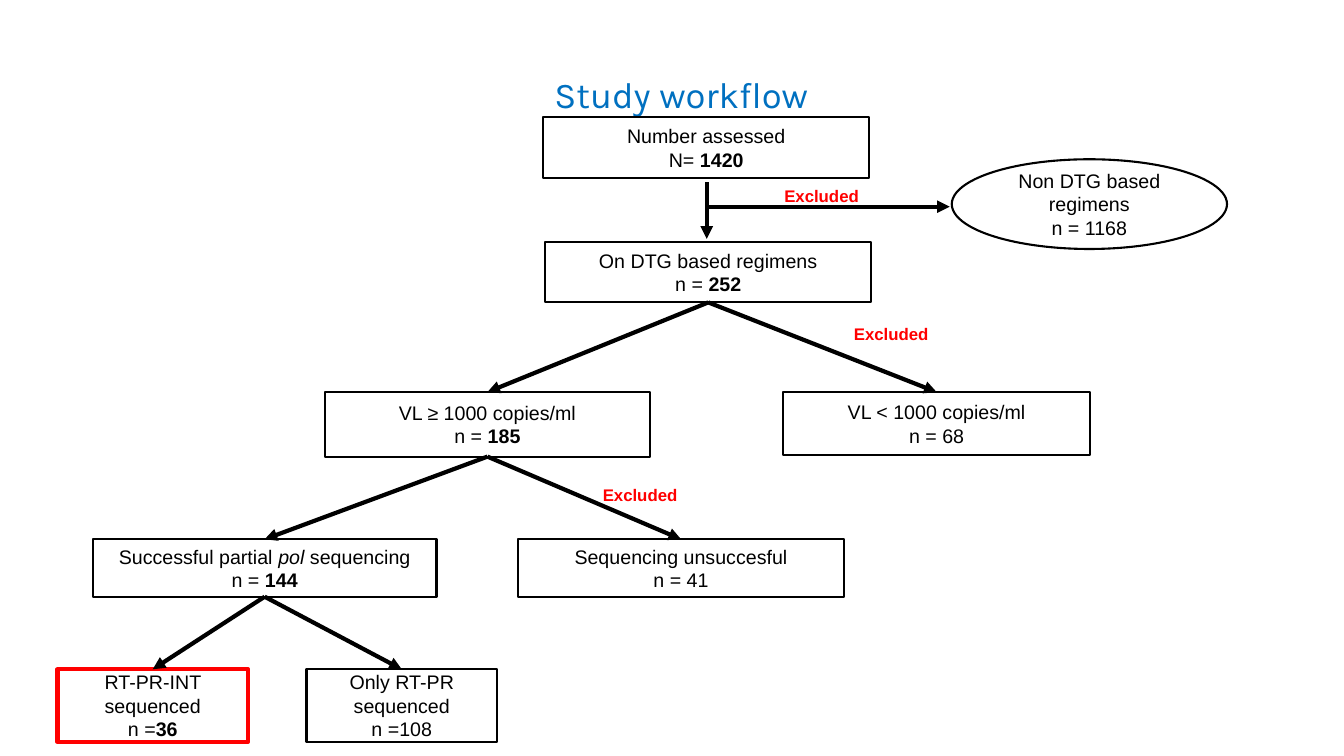
from dataclasses import dataclass

from lxml.etree import SubElement
from pptx import Presentation
from pptx.dml.color import RGBColor
from pptx.enum.shapes import MSO_CONNECTOR, MSO_SHAPE
from pptx.enum.text import MSO_ANCHOR, MSO_AUTO_SIZE, PP_ALIGN
from pptx.oxml.ns import qn
from pptx.shapes.autoshape import Shape
from pptx.shapes.connector import Connector
from pptx.slide import Slide
from pptx.text.text import Font
from pptx.util import Inches, Pt

CELL = Inches(0.1)  # one column or row of the grid
TOP, BOTTOM = 0, 2  # connection sites of a rectangle


@dataclass(frozen=True)
class Theme:
    ink: RGBColor = RGBColor(0, 0, 0)
    alert: RGBColor = RGBColor(255, 0, 0)
    title: RGBColor = RGBColor(0, 112, 192)
    body_font: str = "Arial"
    title_font: str = "Karla"
    title_size: int = 26
    body_size: int = 14
    label_size: int = 12
    thin: float = 1.5
    thick: float = 3


@dataclass(frozen=True)
class Step:
    """A node of the flow; *marks* set off numbers (bold) and words (italic)."""
    name: str
    mid: float
    top: float
    wide: float
    high: float
    text: str
    form: MSO_SHAPE = MSO_SHAPE.RECTANGLE
    final: bool = False


THEME = Theme()

STEPS = [
    Step("all", 70.05, 11.6, 32.3, 6.1, "Number assessed\nN= *1420*"),
    Step("other", 108.05, 15.8, 27.3, 8.9, "Non DTG based regimens\nn = 1168", MSO_SHAPE.OVAL),
    Step("dtg", 70.25, 24, 32.3, 6, "On DTG based regimens\nn = *252*"),
    Step("high", 48.35, 38.9, 32.3, 6.4, "VL ≥ 1000 copies/ml\nn = *185*"),
    Step("low", 92.9, 38.9, 30.4, 6.2, "VL < 1000 copies/ml\nn = 68"),
    Step("done", 26.25, 53.5, 34.1, 5.7, "Successful partial *pol* sequencing\nn = *144*"),
    Step("failed", 67.55, 53.5, 32.3, 5.7, "Sequencing unsuccesful\nn = 41"),
    Step("full", 15.15, 66.4, 18.9, 7.2, "RT-PR-INT sequenced\nn =*36*", final=True),
    Step("part", 39.85, 66.4, 18.9, 7.2, "Only RT-PR\nsequenced\nn =108"),
]
SPLITS = {"dtg": ("high", "low"), "high": ("done", "failed"), "done": ("full", "part")}
ARROWS = [((70.1, 18.1), (70.1, 23.7)), ((70.1, 20.5), (94.2, 20.5))]
LABELS = [(76.8, 17.9), (83.7, 31.6), (58.8, 47.6)]


def cells(*counts: float) -> list[int]:
    return [round(count * CELL) for count in counts]


def style(font: Font, name: str, size: int, color: RGBColor) -> None:
    font.name, font.size = name, Pt(size)
    font.color.rgb = color


def draw_step(slide: Slide, step: Step) -> Shape:
    box = slide.shapes.add_shape(
        step.form, *cells(step.mid - step.wide / 2, step.top, step.wide, step.high))
    box.shadow.inherit = False
    box.fill.background()
    box.line.color.rgb = THEME.alert if step.final else THEME.ink
    box.line.width = Pt(THEME.thick if step.final else THEME.thin)
    frame = box.text_frame
    frame.word_wrap = True
    frame.vertical_anchor = MSO_ANCHOR.MIDDLE
    for row, line in enumerate(step.text.split("\n")):
        para = frame.add_paragraph() if row else frame.paragraphs[0]
        para.alignment = PP_ALIGN.CENTER
        for place, piece in enumerate(line.split("*")):
            if not piece:
                continue
            run = para.add_run()
            run.text = piece
            style(run.font, THEME.body_font, THEME.body_size, THEME.ink)
            if place % 2:
                run.font.bold = piece.isdigit()
                run.font.italic = not piece.isdigit()
    return box


def draw_arrow(slide: Slide, start: tuple[float, float], end: tuple[float, float]) -> Connector:
    arrow = slide.shapes.add_connector(MSO_CONNECTOR.STRAIGHT, *cells(*start, *end))
    arrow.line.color.rgb = THEME.ink
    arrow.line.width = Pt(THEME.thick)
    SubElement(arrow.line._get_or_add_ln(), qn("a:tailEnd"), type="triangle")
    SubElement(arrow._element.spPr, qn("a:effectLst"))
    return arrow


def join(slide: Slide, source: Shape, target: Shape) -> None:
    arrow = draw_arrow(slide, (0, 0), (1, 1))
    arrow.begin_connect(source, BOTTOM)
    arrow.end_connect(target, TOP)


def draw_label(slide: Slide, left: float, top: float) -> None:
    label = slide.shapes.add_textbox(*cells(left, top, 13.9, 3))
    label.text_frame.word_wrap = True
    label.text_frame.text = "Excluded"
    font = label.text_frame.paragraphs[0].runs[0].font
    style(font, THEME.body_font, THEME.label_size, THEME.alert)
    font.bold = True


def draw_title(slide: Slide) -> None:
    title = slide.shapes.title
    title.left, title.top, title.width, title.height = cells(10.1, 7.2, 115, 4.7)
    frame = title.text_frame
    frame.text = "Study workflow"
    frame.auto_size = MSO_AUTO_SIZE.NONE
    frame.vertical_anchor = MSO_ANCHOR.MIDDLE
    para = frame.paragraphs[0]
    para.alignment = PP_ALIGN.CENTER
    para.line_spacing = 0.9
    style(para.runs[0].font, THEME.title_font, THEME.title_size, THEME.title)


def main() -> None:
    deck = Presentation()
    deck.slide_width, deck.slide_height = Inches(13.33), Inches(7.5)
    slide = deck.slides.add_slide(deck.slide_layouts.get_by_name("Title Only"))
    draw_title(slide)
    boxes = {step.name: draw_step(slide, step) for step in STEPS}
    for source, targets in SPLITS.items():
        for target in targets:
            join(slide, boxes[source], boxes[target])
    for start, end in ARROWS:
        draw_arrow(slide, start, end)
    for left, top in LABELS:
        draw_label(slide, left, top)
    deck.save("out.pptx")


if __name__ == "__main__":
    main()
